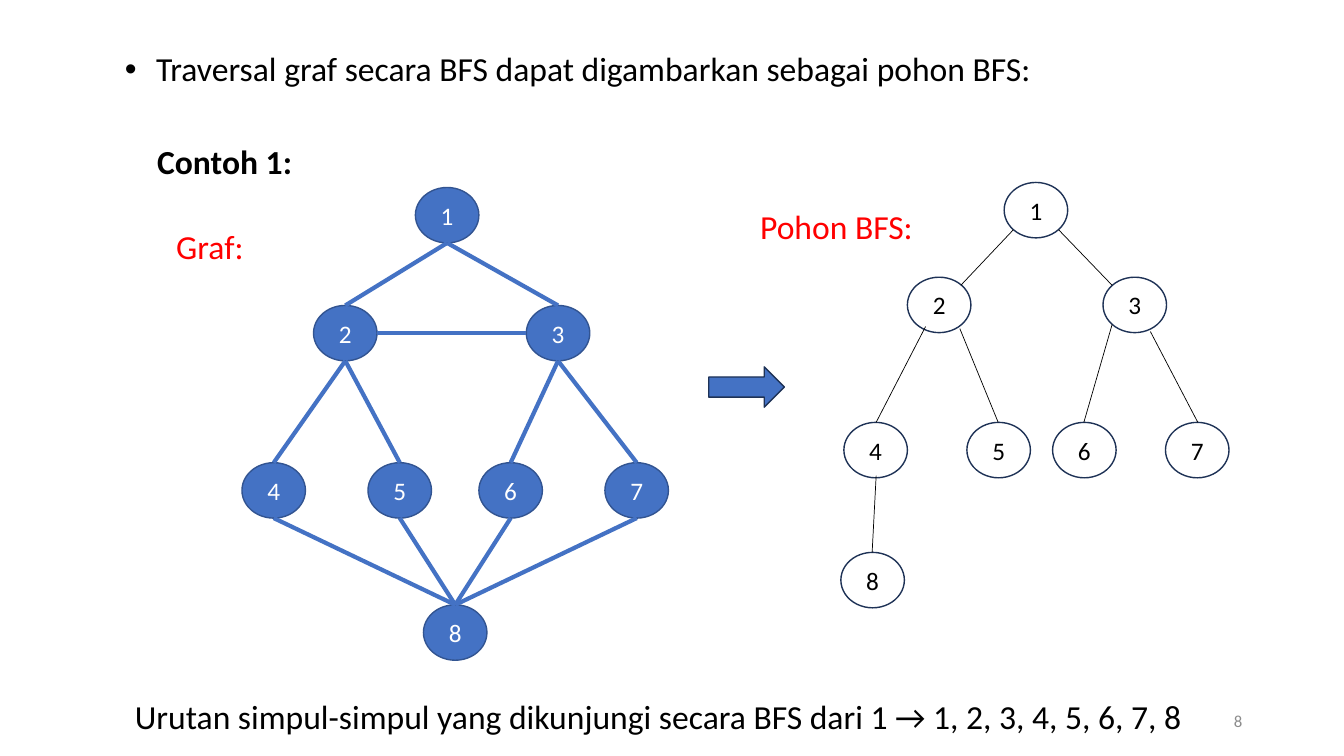
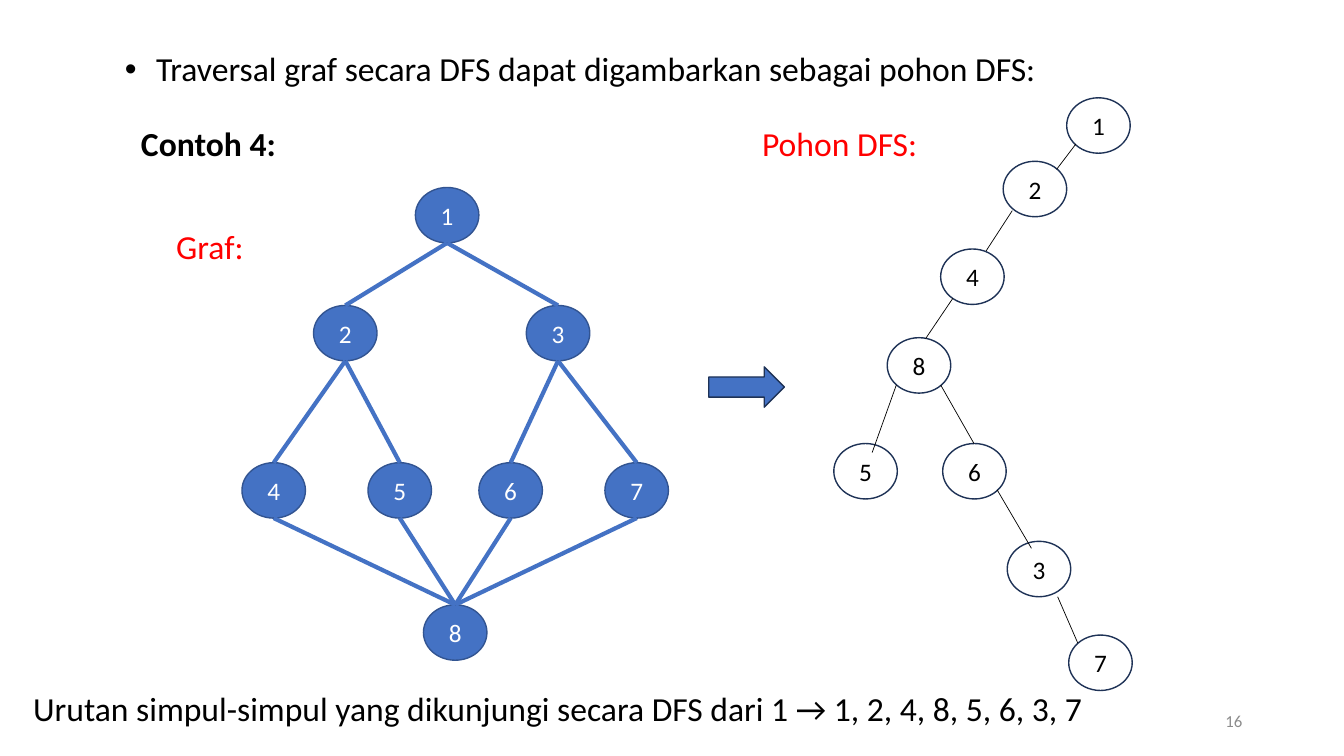
from lxml import etree
from pptx import Presentation
from pptx.dml.color import RGBColor
from pptx.enum.shapes import MSO_CONNECTOR, MSO_SHAPE
from pptx.enum.text import MSO_ANCHOR, MSO_AUTO_SIZE, PP_ALIGN
from pptx.oxml.ns import qn
from pptx.util import Inches, Pt

OVAL, ARROW = MSO_SHAPE.OVAL, MSO_SHAPE.RIGHT_ARROW
STRAIGHT = MSO_CONNECTOR.STRAIGHT
LEFT, CENTER, RIGHT = PP_ALIGN.LEFT, PP_ALIGN.CENTER, PP_ALIGN.RIGHT
TOP, MIDDLE = MSO_ANCHOR.TOP, MSO_ANCHOR.MIDDLE
FIT, FIXED = MSO_AUTO_SIZE.SHAPE_TO_FIT_TEXT, MSO_AUTO_SIZE.NONE

FONT = "Calibri"
COLORS = {
    "black": "000000", "white": "FFFFFF", "red": "FF0000", "gray": "8C8C8C",
    "blue": "4472C4", "graph_line": "325491", "navy": "1E3256",
}
NODE_W, NODE_H = 0.63, 0.55

GRAPH_NODES = {
    1: (4.12, 1.86), 2: (3.11, 3.03), 3: (5.22, 3.03), 4: (2.4, 4.59),
    5: (3.65, 4.59), 6: (4.75, 4.59), 7: (6, 4.59), 8: (4.2, 6),
}
GRAPH_EDGES = [(1, 2), (1, 3), (2, 4), (2, 5), (3, 6), (3, 7),
               (4, 8), (5, 8), (6, 8), (7, 8)]

SLIDES = [
    {
        "method": "BFS", "example": "Contoh 1:", "example_at": (1.46, 1.35),
        "tree_label_at": (7.44, 1.99), "number": "8",
        "order": "1, 2, 3, 4, 5, 6, 7, 8", "order_box": (1.24, 6.85, 10.77, 0.5),
        "side_edges": [(2, 3)],
        "tree_nodes": {
            1: (9.96, 1.81), 2: (9, 2.75), 3: (10.94, 2.75), 4: (8.37, 4.19),
            5: (9.59, 4.19), 6: (10.44, 4.19), 7: (11.56, 4.19), 8: (8.34, 5.48),
        },
        "tree_lines": [
            (10.05, 2.28, 9.53, 2.83), (10.5, 2.28, 11.03, 2.83),
            (9.18, 3.24, 8.69, 4.19), (9.52, 3.26, 9.9, 4.19),
            (11.03, 3.22, 10.75, 4.19), (11.41, 3.29, 11.88, 4.19),
            (8.69, 4.72, 8.65, 5.48),
        ],
    },
    {
        "method": "DFS", "example": "Contoh 4:", "example_at": (1.3, 1.17),
        "tree_label_at": (7.46, 1.17), "number": "16",
        "order": "1, 2, 4, 8, 5, 6, 3, 7", "order_box": (0.23, 6.78, 10.98, 0.5),
        "side_edges": [],
        "tree_nodes": {
            1: (10.58, 0.97), 2: (9.95, 1.6), 3: (9.99, 5.37), 4: (9.33, 2.47),
            5: (8.27, 4.4), 6: (9.35, 4.4), 7: (10.6, 6.3), 8: (8.8, 3.35),
        },
        "tree_lines": [
            (10.67, 1.43, 10.48, 1.68), (10.04, 2.09, 9.78, 2.49),
            (9.45, 2.96, 9.18, 3.36), (8.89, 3.82, 8.65, 4.49),
            (9.33, 3.82, 9.66, 4.4), (9.89, 4.86, 10.23, 5.44),
            (10.49, 5.92, 10.69, 6.38),
        ],
    },
]


def rgb(name):
    return RGBColor.from_string(COLORS[name])


def inches(*values):
    return [Inches(v) for v in values]


def write(sp, text, size=24, color="black", bold=False, align=LEFT,
          anchor=TOP, wrap=True, fit=FIT, bullet=False):
    tf = sp.text_frame
    tf.word_wrap = wrap
    tf.auto_size = fit
    tf.vertical_anchor = anchor
    p = tf.paragraphs[0]
    p.alignment = align
    r = p.add_run()
    r.text = text
    r.font.name = FONT
    r.font.size = Pt(size)
    r.font.bold = bold
    r.font.color.rgb = rgb(color)
    if bullet:
        pPr = p._p.get_or_add_pPr()
        pPr.set("marL", str(Inches(0.31)))
        pPr.set("indent", str(Inches(-0.31)))
        etree.SubElement(pPr, qn("a:buFont")).set("typeface", "Arial")
        etree.SubElement(pPr, qn("a:buChar")).set("char", "•")


def add_text(s, text, box, **fmt):
    write(s.shapes.add_textbox(*inches(*box)), text, **fmt)


def add_outline(s, kind, box, fill, line):
    sp = s.shapes.add_shape(kind, *inches(*box))
    sp.shadow.inherit = False
    if fill:
        sp.fill.solid()
        sp.fill.fore_color.rgb = rgb(fill)
    else:
        sp.fill.background()
    sp.line.color.rgb = rgb(line)
    sp.line.width = Pt(1)
    return sp


def add_nodes(s, nodes, fill, line, color):
    for label, (x, y) in nodes.items():
        sp = add_outline(s, OVAL, (x, y, NODE_W, NODE_H), fill, line)
        write(sp, str(label), size=18, color=color, align=CENTER,
              anchor=MIDDLE, fit=FIXED)


def add_line(s, ends, color, width):
    c = s.shapes.add_connector(STRAIGHT, *inches(*ends))
    c.line.color.rgb = rgb(color)
    c.line.width = Pt(width)
    etree.SubElement(c._element.spPr, qn("a:effectLst"))


def add_graph(s, side_edges):
    add_nodes(s, GRAPH_NODES, "blue", "graph_line", "white")
    for upper, lower in GRAPH_EDGES:
        (x1, y1), (x2, y2) = GRAPH_NODES[upper], GRAPH_NODES[lower]
        ends = (x1 + NODE_W / 2, y1 + NODE_H, x2 + NODE_W / 2, y2)
        add_line(s, ends, "blue", 3)
    for left, right in side_edges:
        (x1, y1), (x2, y2) = GRAPH_NODES[left], GRAPH_NODES[right]
        ends = (x1 + NODE_W, y1 + NODE_H / 2, x2, y2 + NODE_H / 2)
        add_line(s, ends, "blue", 3)


def add_tree(s, nodes, lines):
    add_nodes(s, nodes, None, "navy", "black")
    for ends in lines:
        add_line(s, ends, "black", 0.5)


def build_slide(prs, d):
    s = prs.slides.add_slide(prs.slide_layouts[6])
    method = d["method"]
    add_text(s, d["number"], (9.42, 6.95, 3, 0.4), size=12, color="gray",
             align=RIGHT, anchor=MIDDLE, fit=FIXED)
    add_text(s, d["example"], (*d["example_at"], 1.81, 0.5), bold=True)
    add_text(s, f"Urutan simpul-simpul yang dikunjungi secara {method} dari 1 → {d['order']}",
             d["order_box"], wrap=False)
    add_graph(s, d["side_edges"])
    add_tree(s, d["tree_nodes"], d["tree_lines"])
    add_text(s, "Graf:", (1.65, 2.19, 0.94, 0.5), color="red")
    add_text(s, f"Pohon {method}:", (*d["tree_label_at"], 2.25, 0.5), color="red")
    add_text(s, f"Traversal graf secara {method} dapat digambarkan sebagai pohon {method}:",
             (1.14, 0.43, 11.28, 0.5), bullet=True)
    add_outline(s, ARROW, (7.03, 3.64, 0.75, 0.4), "blue", "navy")


def main():
    prs = Presentation()
    prs.slide_width, prs.slide_height = inches(13.33, 7.5)
    for d in SLIDES:
        build_slide(prs, d)
    prs.save("out.pptx")


if __name__ == "__main__":
    main()
